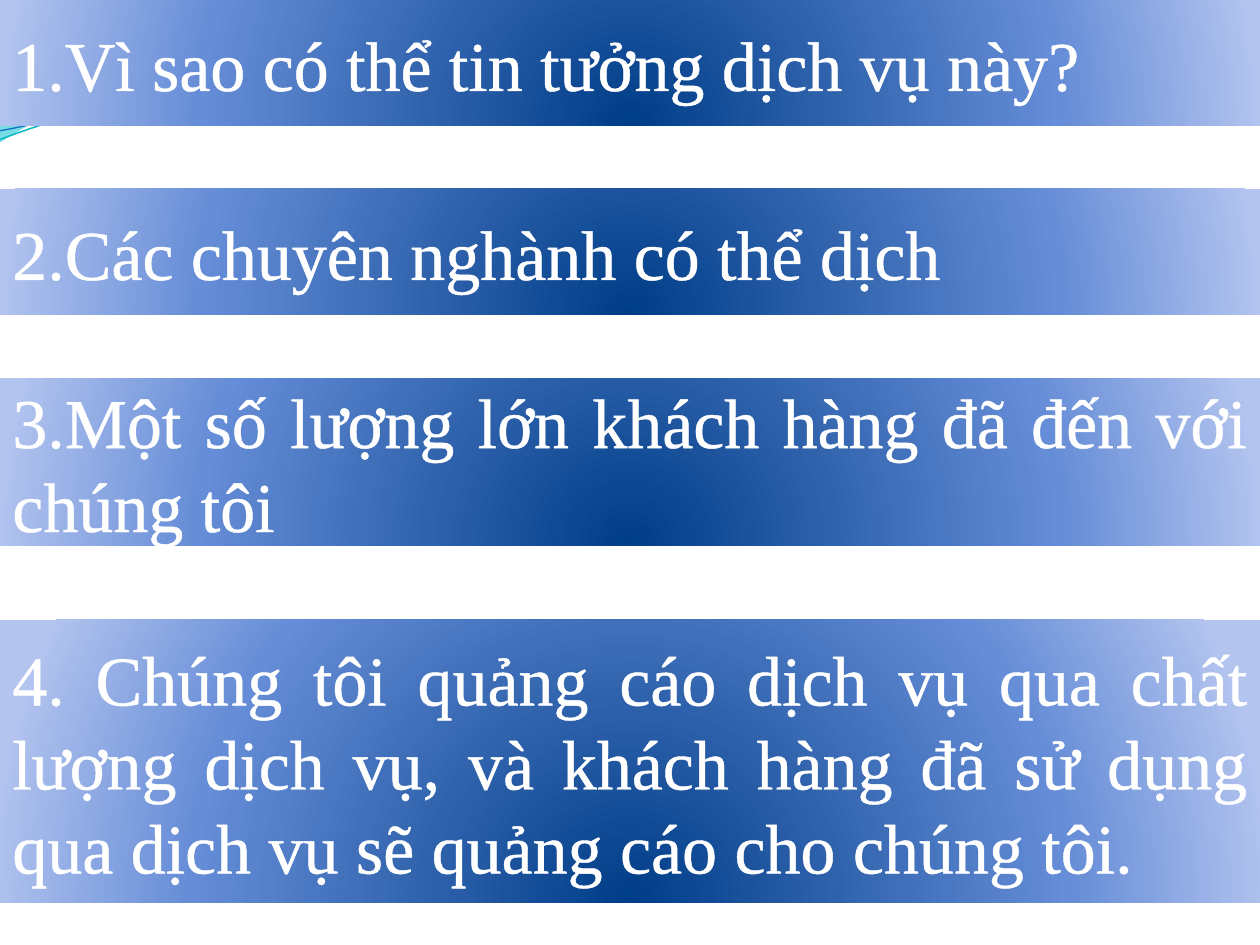
import math
import pptx
import pptx.util
import pptx.oxml
import pptx.oxml.ns
import pptx.dml.color
import pptx.enum.shapes
import pptx.enum.text

PX = 914400 / 126
HUES = {
    "white": "FFFFFF", "navy": "003D87", "blue": "668DD7", "pale": "B3C4EF",
    "deep": "0074A1", "teal": "00C6CF", "sea": "00A1A9", "lake": "008BBF",
    "aqua": "0AB8BF", "sky": "0F6FC6",
}
NS = pptx.oxml.ns.nsdecls("a")


def paint(shape, stops, shade):
    """Give a shape a gradient of (place, hue, alpha) stops."""
    marks = "".join(
        f'<a:gs pos="{pos * 1000}"><a:srgbClr val="{HUES[hue]}">'
        f'<a:alpha val="{alpha * 1000}"/></a:srgbClr></a:gs>'
        for pos, hue, alpha in stops)
    shape._element.spPr.insert(2, pptx.oxml.parse_xml(
        f'<a:gradFill {NS} rotWithShape="1"><a:gsLst>{marks}</a:gsLst>{shade}</a:gradFill>'))
    shape.line.fill.background()
    shape.shadow.inherit = False


def sweep(home, start, legs, close):
    """Draw legs of one point (straight) or three points (curve)."""
    ends = [start] + [leg[-1] for leg in legs]
    left, top = (min(axis) for axis in zip(*ends))
    pen = home.build_freeform(*start, scale=PX)
    pen.add_line_segments(ends[1:], close=close)
    shape = pen.convert_to_shape()
    sides = shape._element.findall(".//" + pptx.oxml.ns.qn("a:lnTo"))
    for side, leg in zip(sides, legs):
        if len(leg) == 3:
            dots = "".join(f'<a:pt x="{x - left}" y="{y - top}"/>' for x, y in leg)
            side.getparent().replace(side, pptx.oxml.parse_xml(
                f'<a:cubicBezTo {NS}>{dots}</a:cubicBezTo>'))
    return shape


deck = pptx.Presentation()
deck.slide_width = round(1260 * PX)
deck.slide_height = round(945 * PX)
slide = deck.slides.add_slide(deck.slide_layouts[6])
shapes = slide.shapes

# Waves behind the top band
waves = [
    ([(0, "deep", 45), (100, "teal", 55)], (0, 0), [
        [(554, -1)],
        [(600, 21), (837, 79), (955, 79)],
        [(1074, 79), (1207, 33), (1260, 11)],
        [(1261, 45)],
        [(1239, 55), (1096, 96), (940, 95)],
        [(784, 95), (481, 35), (324, 43)],
        [(163, 45), (58, 105), (-1, 142)]]),
    ([(0, "sea", 30), (80, "lake", 45)], (604, -1), [
        [(641, 14), (859, 78), (969, 82)],
        [(1079, 87), (1211, 40), (1260, 26)],
        [(1260, 0)]]),
]
for stops, start, legs in waves:
    paint(sweep(shapes, start, legs, True), stops,
          '<a:lin ang="5400000" scaled="1"/>')

# Thin lines along the wave, laid level and then tilted
TILT = 2.7
cos, sin = math.cos(math.radians(TILT)), math.sin(math.radians(TILT))
lines = [
    ("aqua", 0.85, [(0, 140), (60, 117), (199, 72), (349, 66), (498, 59),
                    (747, 112), (898, 101), (1050, 89), (1182, 19), (1257, -3)]),
    ("sky", 0.75, [(0, 131), (59, 121), (207, 77), (357, 71), (508, 64),
                   (752, 106), (903, 95), (1053, 84), (1186, 26), (1260, 8)]),
]
group = shapes.add_group_shape()
for hue, width, dots in lines:
    midx = (dots[0][0] + dots[-1][0]) / 2
    midy = (dots[0][1] + dots[-1][1]) / 2
    flat = [(round(midx + (x - midx) * cos - (y - midy) * sin),
             round(midy + (x - midx) * sin + (y - midy) * cos)) for x, y in dots]
    curve = sweep(group.shapes, flat[0], [flat[i:i + 3] for i in (1, 4, 7)], False)
    curve.rotation = 360 - TILT
    curve.fill.background()
    curve.line.color.rgb = pptx.dml.color.RGBColor.from_string(HUES[hue])
    curve.line.width = pptx.util.Pt(width)
    curve.shadow.inherit = False

# Four full-width bands: top, height, text
bands = [
    (0, 126, "1.Vì sao có thể tin tưởng dịch vụ này?"),
    (189, 126, "2.Các chuyên nghành có thể dịch"),
    (378, 168, "3.Một số lượng lớn khách hàng đã đến với chúng tôi"),
    (620, 283, "4. Chúng tôi quảng cáo dịch vụ qua chất lượng dịch vụ, "
               "và khách hàng đã sử dụng qua dịch vụ sẽ quảng cáo cho chúng tôi."),
]
face = {"name": "Times New Roman", "size": pptx.util.Pt(40)}
glow = ('<a:path path="circle"><a:fillToRect l="50000" t="130000" '
        'r="50000" b="-30000"/></a:path>')
for top, height, words in bands:
    band = shapes.add_shape(pptx.enum.shapes.MSO_SHAPE.RECTANGLE, 0,
                            round(top * PX), round(1260 * PX), round(height * PX))
    paint(band, [(0, "navy", 100), (68, "blue", 100), (100, "pale", 100)], glow)
    frame = band.text_frame
    frame.word_wrap = True
    frame.vertical_anchor = pptx.enum.text.MSO_ANCHOR.MIDDLE
    para = frame.paragraphs[0]
    para.alignment = pptx.enum.text.PP_ALIGN.JUSTIFY
    run = para.add_run()
    run.text = words
    for key, value in face.items():
        setattr(run.font, key, value)
    run.font.color.rgb = pptx.dml.color.RGBColor.from_string(HUES["white"])
    # White outline on the letters
    run.font._element.insert(0, pptx.oxml.parse_xml(
        f'<a:ln {NS} w="{pptx.util.Pt(1.45)}"><a:solidFill>'
        f'<a:srgbClr val="{HUES["white"]}"/></a:solidFill></a:ln>'))

deck.save("out.pptx")
